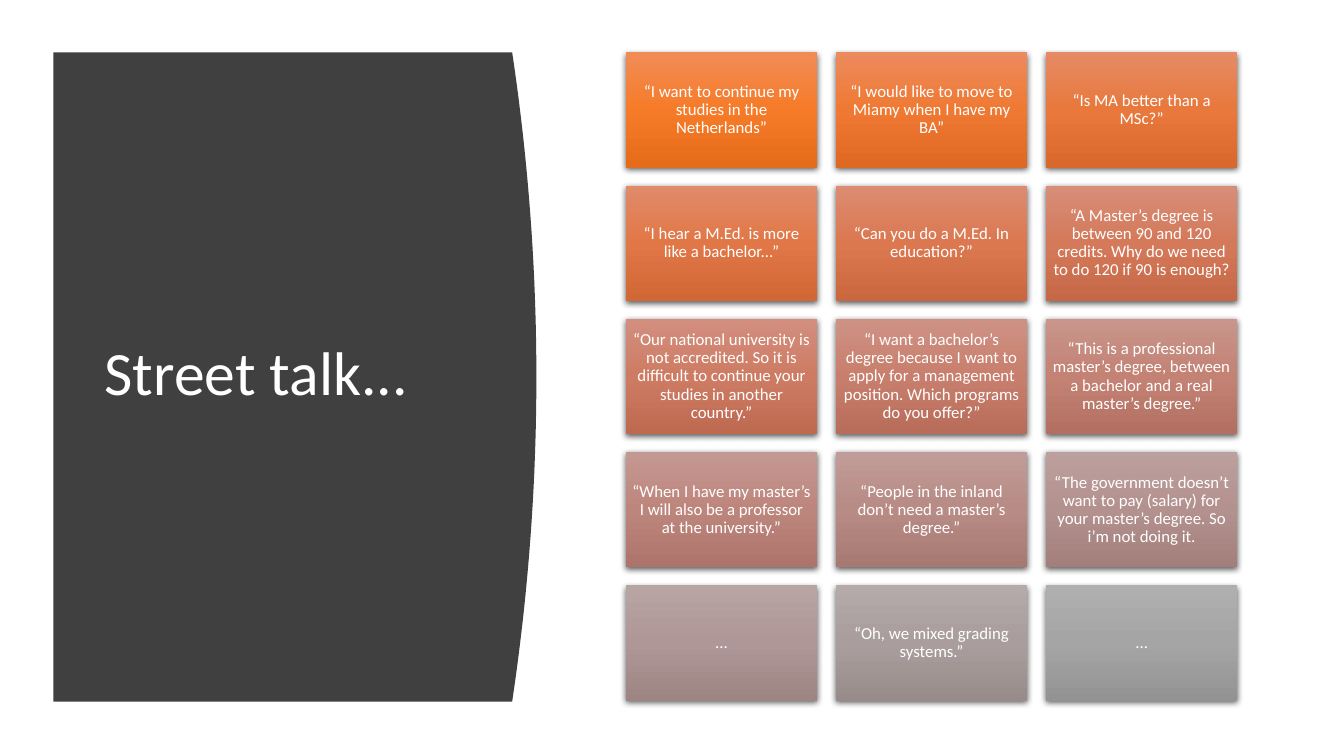
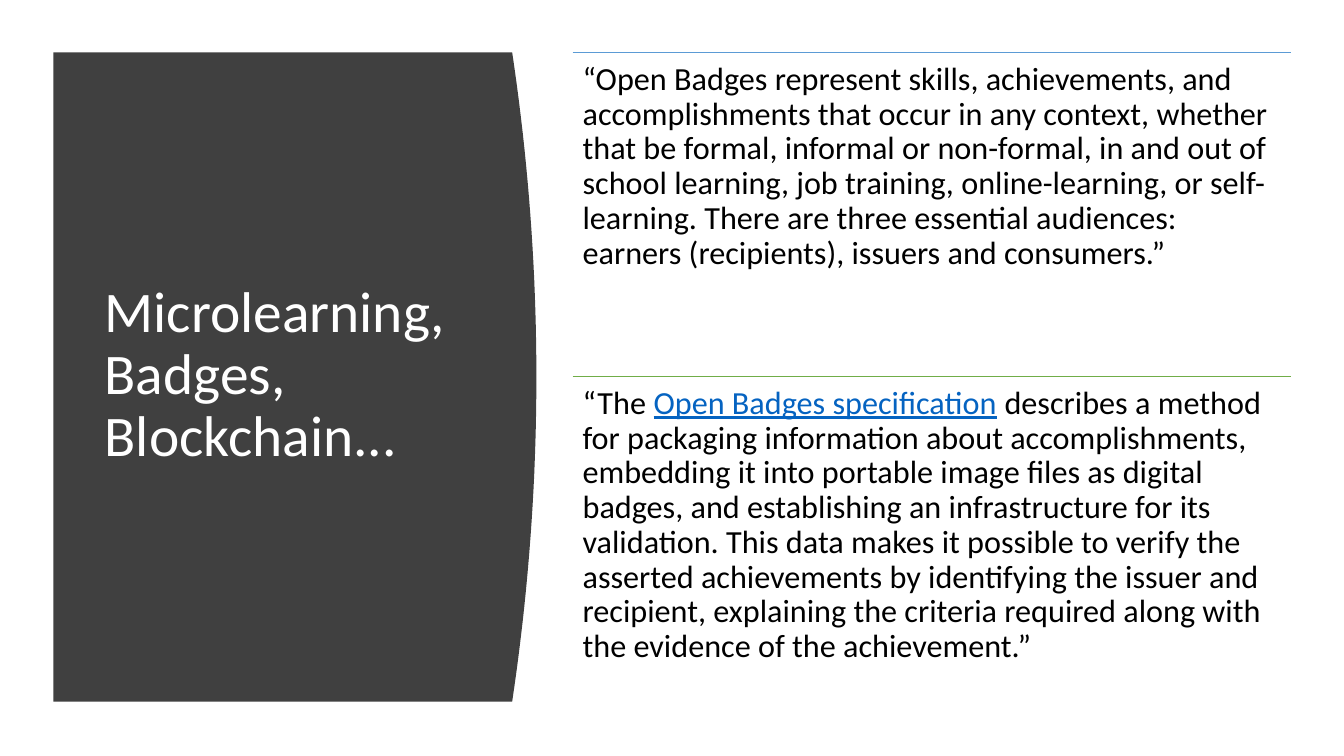
import colorsys

from pptx import Presentation
from pptx import util as u
from pptx.dml.color import RGBColor
from pptx.enum import shapes, text
from pptx.oxml import parse_xml
from pptx.oxml.ns import nsdecls, qn

FONT = "Calibri"
WHITE = RGBColor(0xFF, 0xFF, 0xFF)
BLACK = RGBColor(0x00, 0x00, 0x00)
CHARCOAL = RGBColor(0x40, 0x40, 0x40)
BLUE = RGBColor(0x5B, 0x9B, 0xD5)
GREEN = RGBColor(0x70, 0xAD, 0x47)
LINK = RGBColor(0x05, 0x63, 0xC1)

# Gradient stops (percent, colour on the first card, colour on the last card)
CARD_STOPS = [
    (0, RGBColor(0xF1, 0x8C, 0x57), RGBColor(0xAF, 0xAF, 0xAF)),
    (50, RGBColor(0xF6, 0x7B, 0x28), RGBColor(0xA5, 0xA5, 0xA5)),
    (100, RGBColor(0xE5, 0x6C, 0x19), RGBColor(0x93, 0x93, 0x93)),
]

# Boxes are left, top, width, height in inches
SLIDE_W, SLIDE_H = 13.33, 7.5
PANEL = (0.53, 0.52, 4.79, 6.44)
CARDS = (6.21, 0.52, 6.06, 6.43)
QUOTES = (5.68, 0.52, 7.12, 6.43)
BULGE = 0.24

STREET_TALK = [
    "“I want to continue my studies in the Netherlands”",
    "“I would like to move to Miamy when I have my BA”",
    "“Is MA better than a MSc?”",
    "“I hear a M.Ed. is more like a bachelor...”",
    "“Can you do a M.Ed. In education?”",
    "“A Master’s degree is between 90 and 120 credits. Why do we need to do 120 "
    "if 90 is enough?",
    "“Our national university is not accredited. So it is difficult to continue "
    "your studies in another country.”",
    "“I want a bachelor’s degree because I want to apply for a management "
    "position. Which programs do you offer?”",
    "“This is a professional master’s degree, between a bachelor and a real "
    "master’s degree.”",
    "“When I have my master’s I will also be a professor at the university.”",
    "“People in the inland don’t need a master’s degree.”",
    "“The government doesn’t want to pay (salary) for your master’s degree. So "
    "i’m not doing it.",
    "...",
    "“Oh, we mixed grading systems.”",
    "...",
]

BADGE_QUOTES = [
    (BLUE, [
        ("“Open Badges represent skills, achievements, and accomplishments that "
         "occur in any context, whether that be formal, informal or non-formal, "
         "in and out of school learning, job training, online-learning, or "
         "self-learning. There are three essential audiences: earners "
         "(recipients), issuers and consumers.”", {}),
    ]),
    (GREEN, [
        ("“The ", {}),
        ("Open Badges specification", {"color": LINK, "underline": True}),
        (" describes a method for packaging information about accomplishments, "
         "embedding it into portable image files as digital badges, and "
         "establishing an infrastructure for its validation. This data makes it "
         "possible to verify the asserted achievements by identifying the issuer "
         "and recipient, explaining the criteria required along with the evidence "
         "of the achievement.”", {}),
    ]),
]


def inches(*lengths):
    return [u.Inches(n) for n in lengths]


def write(sp, runs, size, color, anchor=text.MSO_ANCHOR.TOP,
          align=text.PP_ALIGN.LEFT, inset=(0.1, 0.05), after=0.0):
    """Fill a shape with one paragraph; after is a share of the text size."""
    tf = sp.text_frame
    across, down = inches(*inset)
    frame = {"word_wrap": True, "vertical_anchor": anchor,
             "margin_left": across, "margin_right": across,
             "margin_top": down, "margin_bottom": down}
    for name, value in frame.items():
        setattr(tf, name, value)
    p = tf.paragraphs[0]
    p.alignment, p.line_spacing, p.space_after = align, 0.9, u.Pt(size * after)
    for words, extra in runs:
        r = p.add_run()
        r.text = words
        fmt = {"name": FONT, "size": u.Pt(size), "color": color, **extra}
        r.font.color.rgb = fmt.pop("color")
        for name, value in fmt.items():
            setattr(r.font, name, value)


def title_panel(s, box, title, size):
    """Dark panel whose right edge bulges as a parabola, with its title."""
    x, y, w, h = box
    steps = 40
    edge = [(x + w - BULGE * (1 - 2 * i / steps) ** 2, y + h * i / steps)
            for i in range(steps + 1)]
    outline = [inches(*point) for point in edge + [(x, y + h)]]
    builder = s.shapes.build_freeform(*inches(x, y))
    builder.add_line_segments(outline, close=True)
    sp = builder.convert_to_shape()
    sp.shadow.inherit = False
    sp.fill.solid()
    sp.fill.fore_color.rgb = CHARCOAL
    sp.line.fill.background()
    tb = s.shapes.add_textbox(*inches(x + 0.41, y + 0.59, 3.75, 5.24))
    write(tb, [(title, {})], size, WHITE, anchor=text.MSO_ANCHOR.MIDDLE)


def blend(start, end, share):
    """Mix two colours by hue, lightness and saturation."""
    a, b = (colorsys.rgb_to_hls(*(c / 255 for c in rgb)) for rgb in (start, end))
    mixed = colorsys.hls_to_rgb(*(m + (n - m) * share for m, n in zip(a, b)))
    return RGBColor(*(round(c * 255) for c in mixed))


def card_finish(sp, share):
    """Vertical three-stop gradient and soft shadow below."""
    sp.fill.gradient()
    sp.fill.gradient_angle = 270
    stops = sp.fill._fill._gradFill.find(qn("a:gsLst"))
    stops.clear()
    for pos, start, end in CARD_STOPS:
        stops.append(parse_xml(
            f'<a:gs {nsdecls("a")} pos="{pos * 1000}">'
            f'<a:srgbClr val="{blend(start, end, share)}"/></a:gs>'))
    sp.line.fill.background()
    sp.shadow.inherit = False
    sp._element.spPr.find(qn("a:effectLst")).append(parse_xml(
        f'<a:outerShdw {nsdecls("a")} blurRad="{u.Pt(4.5)}" dist="{u.Pt(1.5)}" '
        'dir="5400000" algn="ctr" rotWithShape="0"><a:srgbClr val="000000">'
        '<a:alpha val="63000"/></a:srgbClr></a:outerShdw>'))


def card_grid(s, box, quotes, cols=3, gap=(0.19, 0.18)):
    x, y, w, h = box
    rows = -(-len(quotes) // cols)
    card_w = (w - gap[0] * (cols - 1)) / cols
    card_h = (h - gap[1] * (rows - 1)) / rows
    for i, quote in enumerate(quotes):
        row, col = divmod(i, cols)
        sp = s.shapes.add_shape(
            shapes.MSO_SHAPE.RECTANGLE,
            *inches(x + col * (card_w + gap[0]), y + row * (card_h + gap[1]),
                    card_w, card_h))
        card_finish(sp, i / (len(quotes) - 1))
        write(sp, [(quote, {})], 12, WHITE, anchor=text.MSO_ANCHOR.MIDDLE,
              align=text.PP_ALIGN.CENTER, inset=(0.05, 0.05), after=0.35)


def ruled_quotes(s, box, quotes):
    """Equal rows, each a thin coloured rule with a quote below it."""
    x, y, w, h = box
    row_h = h / len(quotes)
    for i, (color, runs) in enumerate(quotes):
        top = y + i * row_h
        rule = s.shapes.add_connector(shapes.MSO_CONNECTOR.STRAIGHT,
                                      *inches(x, top, x + w, top))
        rule.line.color.rgb = color
        rule.line.width = u.Pt(0.5)
        rule._element.spPr.append(parse_xml(f'<a:effectLst {nsdecls("a")}/>'))
        tb = s.shapes.add_textbox(*inches(x, top, w, row_h))
        write(tb, runs, 23, BLACK, inset=(0.1, 0.1), after=0.35)


def main():
    prs = Presentation()
    prs.slide_width, prs.slide_height = inches(SLIDE_W, SLIDE_H)
    pages = [
        ("Street talk...", 44, card_grid, CARDS, STREET_TALK),
        ("Microlearning, Badges, Blockchain...", 41, ruled_quotes, QUOTES,
         BADGE_QUOTES),
    ]
    for title, size, body, box, content in pages:
        s = prs.slides.add_slide(prs.slide_layouts[6])
        title_panel(s, PANEL, title, size)
        body(s, box, content)
    prs.save("out.pptx")


if __name__ == "__main__":
    main()
